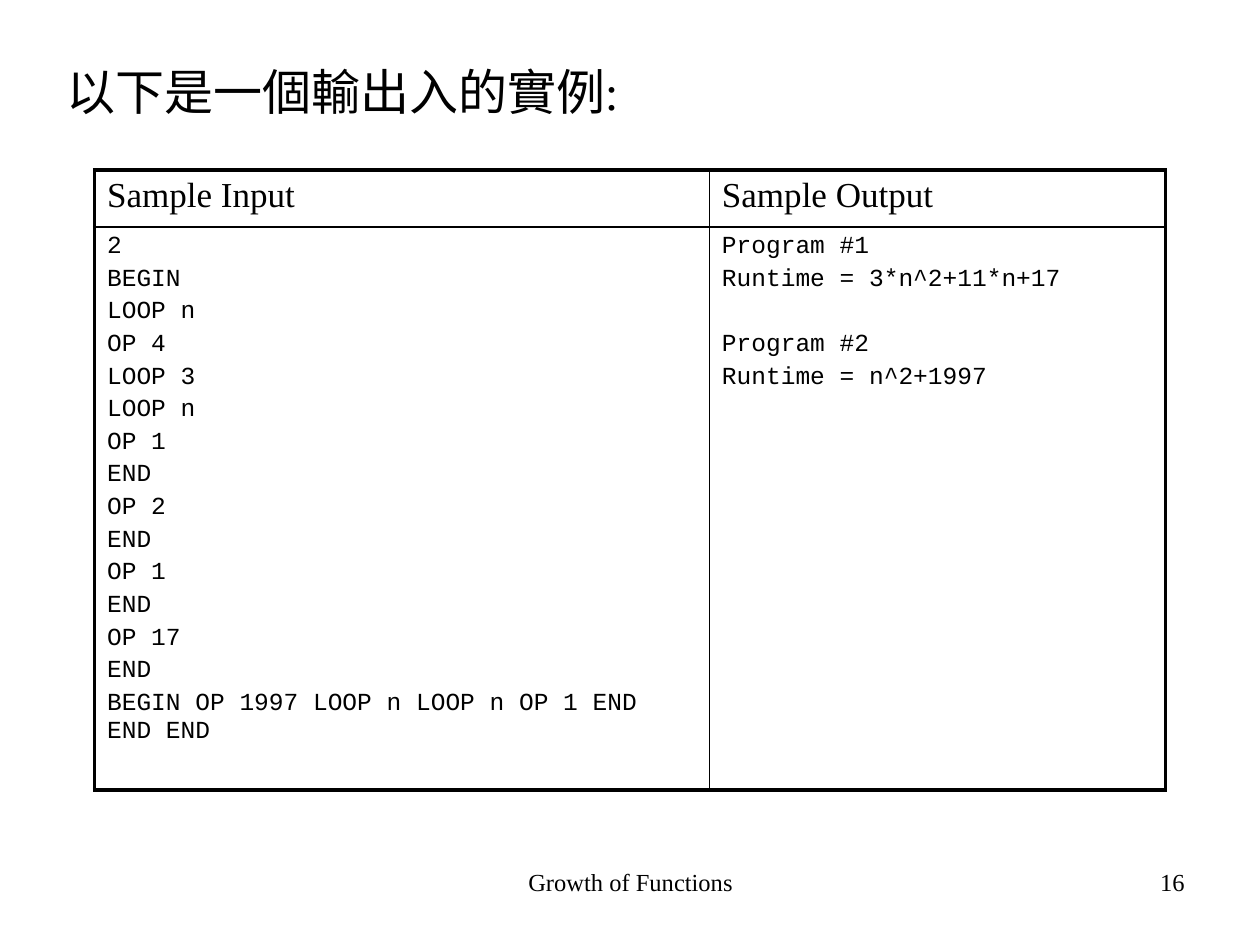
from lxml import etree
from pptx import Presentation
from pptx import util as u
from pptx.dml import color
from pptx.enum import text
from pptx.oxml import ns

SERIF, MONO = "Times New Roman", "Courier New"
INK = "000000"
THIN, THICK = 1, 2.25


def paint(code):
    return color.RGBColor.from_string(code)


class Page:
    def __init__(self, deck):
        self.slide = deck.slides.add_slide(deck.slide_layouts[5])

    def style(self, par, size, face=SERIF, align=text.PP_ALIGN.LEFT, gap=0):
        par.alignment = align
        par.space_before = u.Pt(gap)
        font = par.font
        font.name, font.size, font.bold = face, u.Pt(size), False
        font.color.rgb = paint(INK)

    def title(self, words, box, size):
        shape = self.slide.shapes.title
        shape.left, shape.top, shape.width, shape.height = map(u.Inches, box)
        frame = shape.text_frame
        frame.text = words
        frame.word_wrap = True
        frame.auto_size = text.MSO_AUTO_SIZE.NONE
        frame.vertical_anchor = text.MSO_ANCHOR.TOP
        self.style(frame.paragraphs[0], size, gap=size * 0.2)

    def label(self, words, box, align):
        frame = self.slide.shapes.add_textbox(*map(u.Inches, box)).text_frame
        frame.text = words
        frame.word_wrap = True
        self.style(frame.paragraphs[0], 14, align=align)

    def border(self, cell, widths):
        props = cell._tc.get_or_add_tcPr()
        for spot, (side, width) in enumerate(zip("LRTB", widths)):
            line = etree.Element(ns.qn(f"a:ln{side}"), w=str(u.Pt(width)))
            fill = etree.SubElement(line, ns.qn("a:solidFill"))
            etree.SubElement(fill, ns.qn("a:srgbClr"), val=INK)
            props.insert(spot, line)

    def cell(self, cell, lines, size, face, breaks=()):
        """Fill a cell; lines named in breaks start after one line of space."""
        cell.fill.background()
        cell.text = "\n".join(lines)
        for par in cell.text_frame.paragraphs:
            gap = size * 0.2
            if par.text in breaks:
                gap += size * 1.33
            self.style(par, size, face, gap=gap)

    def table(self, box, cols, rows, heads, bodies, breaks):
        table = self.slide.shapes.add_table(
            len(rows), len(cols), *map(u.Inches, box)).table
        table.first_row = table.horz_banding = False
        for col, width in zip(table.columns, cols):
            col.width = u.Inches(width)
        for row, height in zip(table.rows, rows):
            row.height = u.Inches(height)
        for c, (head, body) in enumerate(zip(heads, bodies)):
            self.cell(table.cell(0, c), [head], 20, SERIF)
            self.cell(table.cell(1, c), body, 14, MONO, breaks)
        # Thick frame outside, thin rules inside
        last, end = len(cols) - 1, len(rows) - 1
        for r in range(len(rows)):
            for c in range(len(cols)):
                outer = (c == 0, c == last, r == 0, r == end)
                self.border(table.cell(r, c),
                            [THICK if edge else THIN for edge in outer])


def main():
    deck = Presentation()
    deck.slide_width, deck.slide_height = u.Inches(10), u.Inches(7.5)
    page = Page(deck)

    # Heading
    page.title("以下是一個輸出入的實例:", (0.43, 0.44, 9, 4.95), 28)

    # Sample table
    source = ["2", "BEGIN", "LOOP n", "OP 4", "LOOP 3", "LOOP n", "OP 1",
              "END", "OP 2", "END", "OP 1", "END", "OP 17", "END",
              "BEGIN OP 1997 LOOP n LOOP n OP 1 END END END"]
    result = ["Program #1", "Runtime = 3*n^2+11*n+17",
              "Program #2", "Runtime = n^2+1997"]
    page.table((0.75, 1.35, 8.5, 4.92), (4.88, 3.62), (0.45, 4.47),
               ("Sample Input", "Sample Output"), (source, result),
               breaks=("Program #2",))

    # Footer
    page.label("Growth of Functions", (3.42, 6.83, 3.17, 0.52),
               text.PP_ALIGN.CENTER)
    page.label("16", (7.17, 6.83, 2.33, 0.52), text.PP_ALIGN.RIGHT)

    deck.save("out.pptx")


if __name__ == "__main__":
    main()
